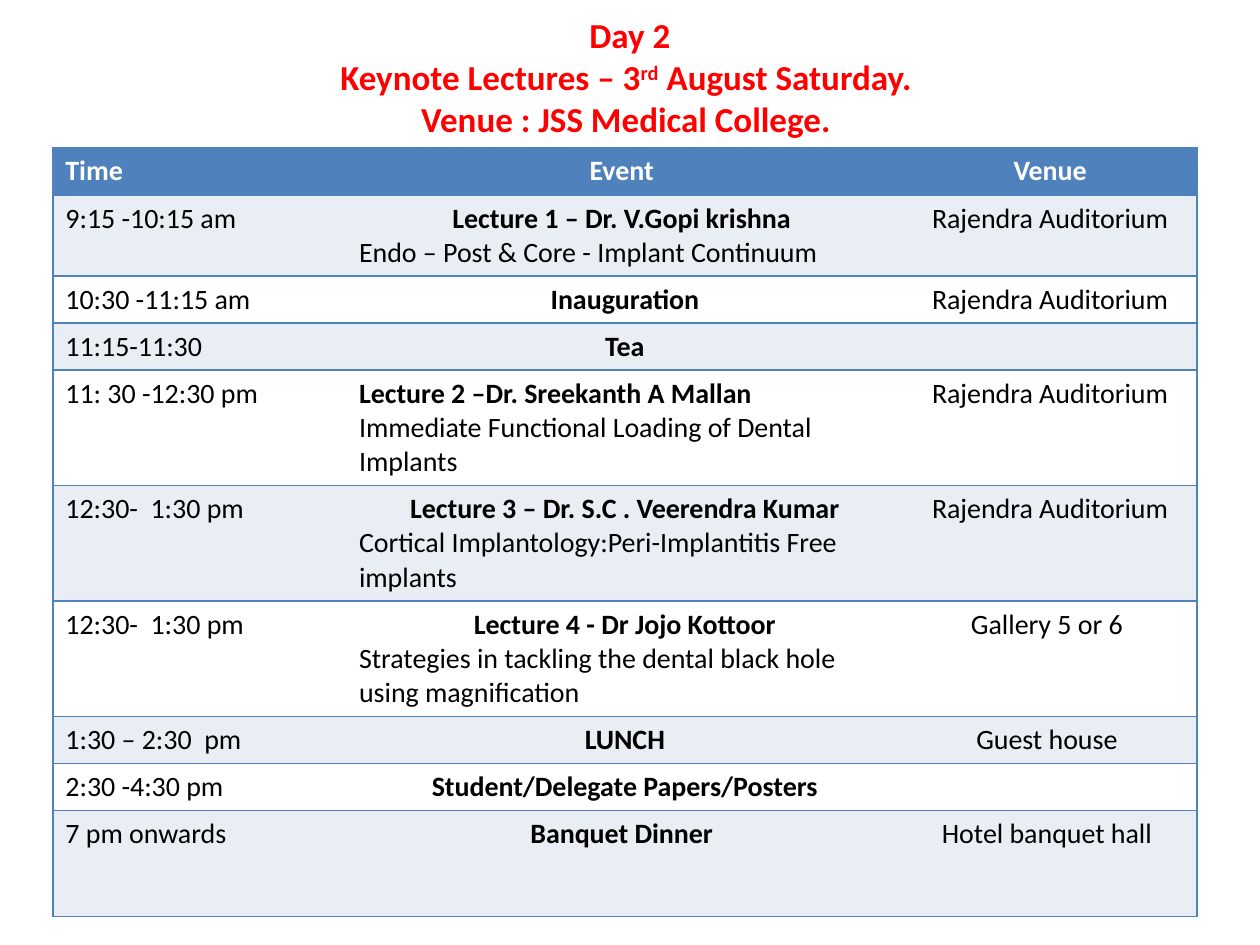
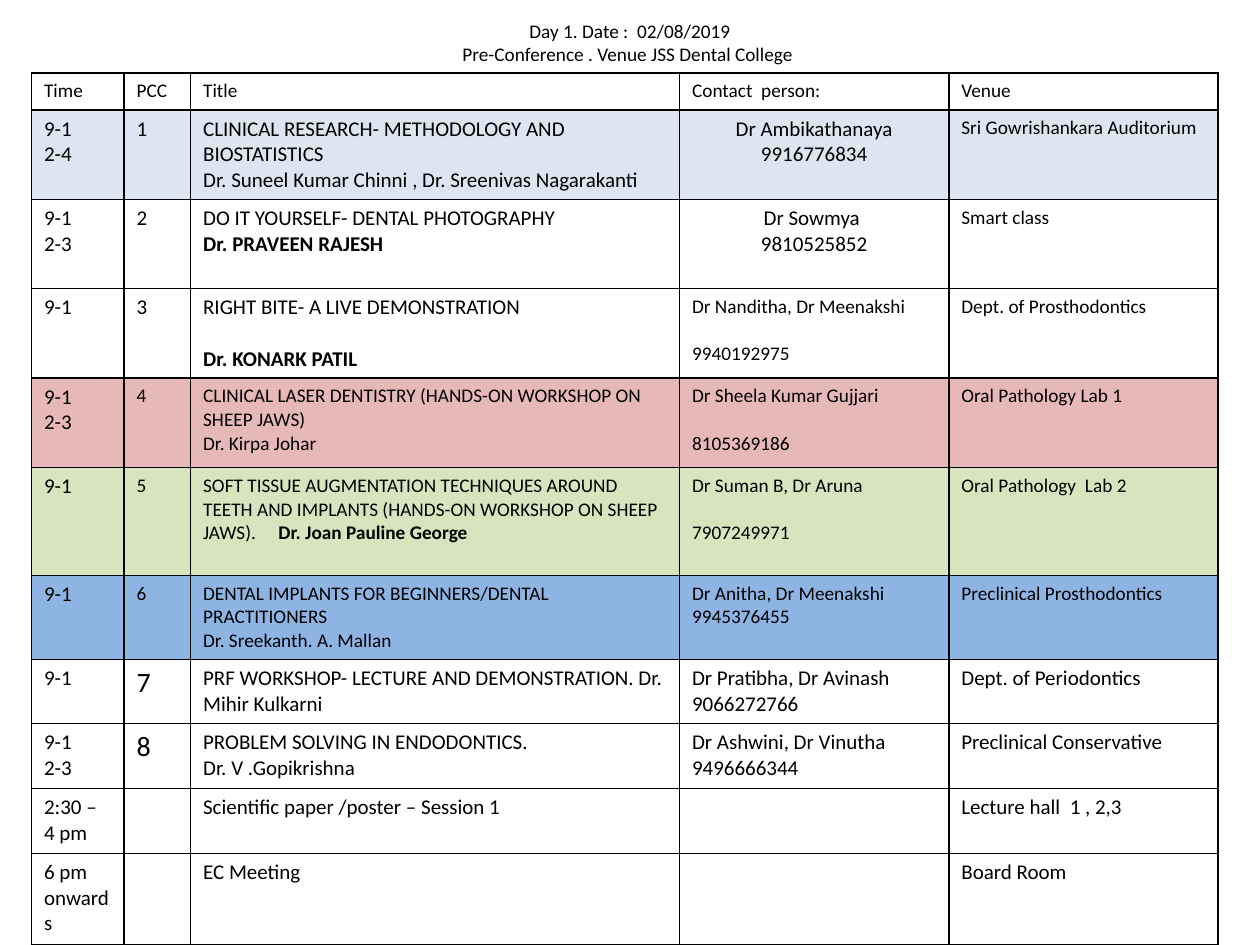
from lxml import etree
from pptx import Presentation
from pptx.dml.color import RGBColor
from pptx.enum import text as t
from pptx.oxml import ns
from pptx.util import Pt

FONT = "Calibri"
BLACK = RGBColor(0, 0, 0)
WHITE = RGBColor(0xFF, 0xFF, 0xFF)
RED = RGBColor(0xFF, 0, 0)
BLUE = RGBColor(0x4F, 0x81, 0xBD)
BAND = RGBColor(0xE9, 0xED, 0xF4)
PALE_BLUE = RGBColor(0xDC, 0xE6, 0xF2)
PINK = RGBColor(0xE6, 0xB9, 0xB8)
GREEN = RGBColor(0xD7, 0xE4, 0xBD)
SKY = RGBColor(0x8E, 0xB4, 0xE3)
LINE_HEIGHT = 1.22
NAME_TAB = Pt(43)

prs = Presentation()
prs.slide_width, prs.slide_height = Pt(720), Pt(540)


def add_page(title_top, title_height, title_parts, size, color, bold, table_at, widths, heights):
    slide = prs.slides.add_slide(prs.slide_layouts[6])
    heading = slide.shapes.add_textbox(Pt(36), Pt(title_top), Pt(648), Pt(title_height)).text_frame
    heading.word_wrap = True
    heading.vertical_anchor = t.MSO_ANCHOR.MIDDLE
    line = heading.paragraphs[0]
    line.alignment = t.PP_ALIGN.CENTER
    for part in title_parts:
        if part == "\v":
            line.add_line_break()
            continue
        run = line.add_run()
        run.text = part
        run.font.name, run.font.size, run.font.bold = FONT, Pt(size), bold
        run.font.color.rgb = color
        if part == "rd":
            run.font._element.set("baseline", "30000")
    left, top = table_at
    table = slide.shapes.add_table(len(heights), len(widths), Pt(left), Pt(top),
                                   Pt(sum(widths)), Pt(sum(heights))).table
    table.first_row = table.horz_banding = False
    for column, width in zip(table.columns, widths):
        column.width = Pt(width)
    for row, height in zip(table.rows, heights):
        row.height = Pt(height)
    return table


def fill_cell(cell, content, size, color, fill, edges, edge_color, centred=0):
    tc_pr = cell._tc.get_or_add_tcPr()
    for side in "LRTB":
        edge = etree.SubElement(tc_pr, ns.qn("a:ln" + side), w=str(Pt(1)))
        if side in edges:
            paint = etree.SubElement(edge, ns.qn("a:solidFill"))
            etree.SubElement(paint, ns.qn("a:srgbClr"), val=str(edge_color))
        else:
            etree.SubElement(edge, ns.qn("a:noFill"))
    if fill is None:
        cell.fill.background()
    else:
        cell.fill.solid()
        cell.fill.fore_color.rgb = fill
    if not content:
        end = cell.text_frame.paragraphs[0]._p.get_or_add_endParaRPr()
        end.set("sz", str(size * 100))
        return
    gap = 0
    lines = content.split("\n")
    for index, words in enumerate(lines):
        if not words:
            gap = size * LINE_HEIGHT
            continue
        frame = cell.text_frame
        line = frame.paragraphs[0] if index == 0 else frame.add_paragraph()
        if index < centred:
            line.alignment = t.PP_ALIGN.CENTER
        if gap:
            line.space_before = Pt(round(gap, 1))
            gap = 0
        if "\t" in words:
            tabs = etree.SubElement(line._p.get_or_add_pPr(), ns.qn("a:tabLst"))
            etree.SubElement(tabs, ns.qn("a:tab"), pos=str(NAME_TAB), algn="l")
        for number, piece in enumerate(words.split("*")):
            if piece:
                run = line.add_run()
                run.text = piece
                run.font.name, run.font.size = FONT, Pt(size)
                run.font.bold = number % 2 == 1
                run.font.color.rgb = color


auditorium = "Rajendra Auditorium"
keynotes = [
    ("*Time*", "*Event *", "*Venue*"),
    ("9:15 -10:15 am", "*Lecture 1 – Dr. V.Gopi krishna *\nEndo – Post & Core - Implant Continuum", auditorium),
    ("10:30 -11:15 am", "*Inauguration*", auditorium),
    ("11:15-11:30", "*Tea*", ""),
    ("11: 30 -12:30 pm",
     "*Lecture 2 –Dr. Sreekanth A Mallan*\nImmediate Functional Loading of Dental Implants", auditorium),
    ("12:30-  1:30 pm",
     "*Lecture 3 – Dr. S.C . Veerendra Kumar*\nCortical Implantology:Peri-Implantitis Free implants", auditorium),
    ("12:30-  1:30 pm",
     "*Lecture 4 - Dr Jojo Kottoor*\nStrategies in tackling the dental black hole using magnification",
     "Gallery 5 or 6 "),
    ("1:30 – 2:30  pm", "*LUNCH*", "Guest house "),
    ("2:30 -4:30 pm", "*Student/Delegate Papers/Posters*", ""),
    ("7 pm onwards", "*Banquet Dinner *", "Hotel banquet hall "),
]
programme = add_page(
    21.6, 44.6,
    ["Day 2", "\v", "Keynote Lectures – 3", "rd", " August Saturday. ", "\v", "Venue : JSS Medical College. "],
    20, RED, True, (30.2, 84.2), [167.8, 318.2, 167.8],
    [27.4, 46.2, 26.9, 26.9, 66, 66, 66, 26.9, 26.9, 60.5])
for r, entry in enumerate(keynotes):
    row_fill = BLUE if r == 0 else BAND if r % 2 else WHITE
    for c, content in enumerate(entry):
        left_aligned = c == 0 or content.startswith("*Lecture 2")
        fill_cell(programme.cell(r, c), content, 16, WHITE if r == 0 else BLACK, row_fill,
                  ("LTB", "TB", "RTB")[c], BLUE, 0 if left_aligned else 1)

large_venue = (12, 12, 12, 12, 12)
small_venue = (12, 12, 12, 12, 11)
small_contact = (12, 12, 12, 11, 11)
small_title = (12, 11, 11, 11, 11)
large_number = (12, 16, 12, 12, 12)
courses = [
    ((11,) * 5, None, "Time", "PCC", "Title", "Contact  person:", "Venue"),
    (small_venue, PALE_BLUE, "9-1\n2-4", "1",
     "CLINICAL RESEARCH- METHODOLOGY AND BIOSTATISTICS\nDr. Suneel Kumar Chinni , Dr. Sreenivas Nagarakanti",
     "Dr Ambikathanaya\n9916776834", "Sri Gowrishankara Auditorium"),
    (small_venue, None, "9-1\n2-3", "2", "DO IT YOURSELF- DENTAL PHOTOGRAPHY\n*Dr. PRAVEEN RAJESH*",
     "Dr Sowmya \n9810525852", "Smart class"),
    (small_contact, None, "9-1", "3", "RIGHT BITE- A LIVE DEMONSTRATION\n\n*Dr. KONARK PATIL*",
     "Dr Nanditha, Dr Meenakshi\n\n9940192975", "Dept. of Prosthodontics"),
    (small_title, PINK, "9-1\n2-3", "4",
     "CLINICAL LASER DENTISTRY (HANDS-ON WORKSHOP ON SHEEP JAWS)\nDr. Kirpa Johar",
     "Dr Sheela Kumar Gujjari\n\n8105369186", "Oral Pathology Lab 1"),
    (small_title, GREEN, "9-1", "5",
     "SOFT TISSUE AUGMENTATION TECHNIQUES AROUND TEETH AND IMPLANTS "
     "(HANDS-ON WORKSHOP ON SHEEP JAWS).\t*Dr. Joan Pauline George*",
     "Dr Suman B, Dr Aruna\n\n7907249971", "Oral Pathology  Lab 2"),
    (small_title, SKY, "9-1", "6",
     "DENTAL IMPLANTS FOR BEGINNERS/DENTAL PRACTITIONERS\nDr. Sreekanth. A. Mallan",
     "Dr Anitha, Dr Meenakshi\n9945376455", "Preclinical Prosthodontics"),
    (large_number, None, "9-1", "7", "PRF WORKSHOP- LECTURE AND DEMONSTRATION. Dr. Mihir Kulkarni",
     "Dr Pratibha, Dr Avinash\n9066272766", "Dept. of Periodontics"),
    (large_number, None, "9-1\n2-3", "8", "PROBLEM SOLVING IN ENDODONTICS.\nDr. V .Gopikrishna",
     "Dr Ashwini, Dr Vinutha\n9496666344", "Preclinical Conservative"),
    (large_venue, None, "2:30 – 4 pm", "", "Scientific paper /poster – Session 1", "", "Lecture hall  1 , 2,3"),
    (large_venue, None, "6 pm onwards", "", "EC Meeting", "", "Board Room"),
]
workshops = add_page(
    12.2, 23.8, ["Day 1. Date :  02/08/2019", "\v", "Pre-Conference . Venue JSS Dental College "],
    11, BLACK, False, (18, 41.8), [52.9, 38, 279.4, 153.9, 153.9],
    [21, 51.1, 51.1, 51.1, 51.1, 61.7, 48, 36.7, 37, 37.2, 52.2])
for r, (sizes, row_fill, *entry) in enumerate(courses):
    for c, (content, size) in enumerate(zip(entry, sizes)):
        fill_cell(workshops.cell(r, c), content, size, BLACK, row_fill, "LRTB", BLACK,
                  2 if c == 3 and r in (1, 2) else 0)

prs.save("out.pptx")
